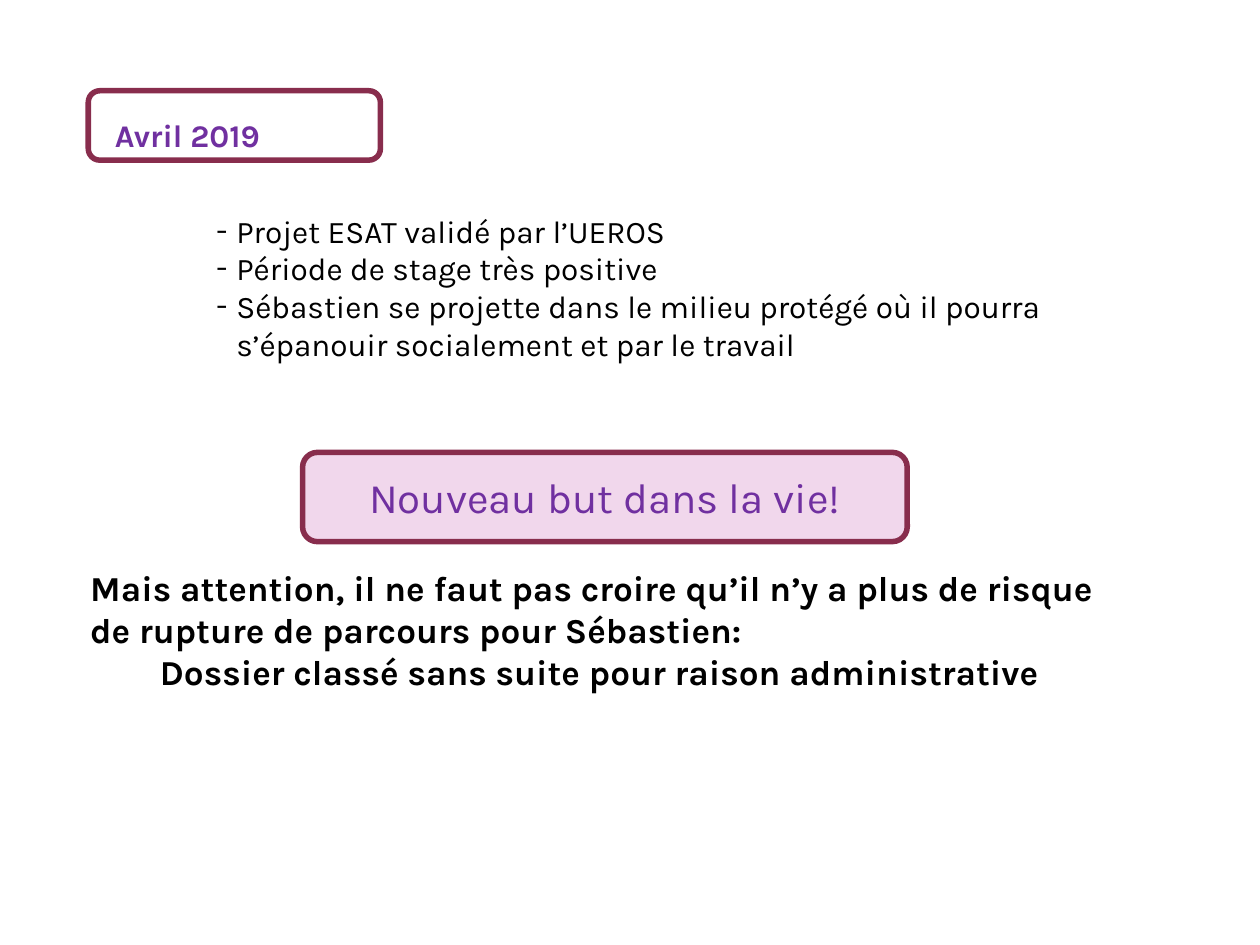
from lxml import etree
from pptx import Presentation
from pptx.dml.color import RGBColor
from pptx.enum.shapes import MSO_SHAPE
from pptx.enum.text import MSO_ANCHOR, MSO_AUTO_SIZE, PP_ALIGN
from pptx.oxml.ns import qn
from pptx.util import Cm, Pt

ROUNDED = MSO_SHAPE.ROUNDED_RECTANGLE
TOP, MIDDLE = MSO_ANCHOR.TOP, MSO_ANCHOR.MIDDLE
NO_AUTOFIT = MSO_AUTO_SIZE.NONE
LEFT, CENTER = PP_ALIGN.LEFT, PP_ALIGN.CENTER


def color(value):
    return RGBColor.from_string(value)


class SlideBuilder:
    FONT = "Karla"
    BLACK = "000000"
    PURPLE = "7030A0"
    BORDER = "882D4D"
    PINK = "F1D7EC"

    def __init__(self, slide):
        self.slide = slide

    def set_text(self, frame, lines, size, ink, bold=False, aligns=(LEFT,), anchor=TOP):
        frame.word_wrap = True
        frame.auto_size = NO_AUTOFIT
        frame.vertical_anchor = anchor
        frame.text = "\n".join(lines)
        for index, paragraph in enumerate(frame.paragraphs):
            paragraph.alignment = aligns[index % len(aligns)]
            paragraph.space_before = Pt(0)
            for run in paragraph.runs:
                run.font.name = self.FONT
                run.font.size = Pt(size)
                run.font.bold = bold
                run.font.color.rgb = color(ink)

    def place(self, shape, left, top, width, height):
        shape.left, shape.top = Cm(left), Cm(top)
        shape.width, shape.height = Cm(width), Cm(height)
        return shape

    def title(self, text, *box):
        heading = self.place(self.slide.shapes.title, *box)
        self.set_text(heading.text_frame, [text], 18, self.PURPLE, bold=True)

    def dash_list(self, items, indent, hanging, *box):
        body = self.place(self.slide.placeholders[1], *box)
        self.set_text(body.text_frame, items, 18, self.BLACK)
        for paragraph in body.text_frame.paragraphs:
            properties = paragraph._p.get_or_add_pPr()
            properties.set("marL", str(Cm(indent + hanging)))
            properties.set("indent", str(-Cm(hanging)))
            etree.SubElement(properties, qn("a:buFont"), typeface=self.FONT)
            etree.SubElement(properties, qn("a:buChar"), char="-")

    def frame(self, left, top, width, height, fill=None):
        panel = self.slide.shapes.add_shape(
            ROUNDED, Cm(left), Cm(top), Cm(width), Cm(height))
        panel.shadow.inherit = False
        if fill:
            panel.fill.solid()
            panel.fill.fore_color.rgb = color(fill)
        else:
            panel.fill.background()
        panel.line.color.rgb = color(self.BORDER)
        panel.line.width = Pt(3.15)
        return panel

    def banner(self, text, *box):
        panel = self.frame(*box, fill=self.PINK)
        self.set_text(panel.text_frame, [text], 24, self.PURPLE,
                      aligns=(CENTER,), anchor=MIDDLE)

    def warning(self, lines, left, top, width, height):
        note = self.slide.shapes.add_textbox(
            Cm(left), Cm(top), Cm(width), Cm(height))
        self.set_text(note.text_frame, lines, 20, self.BLACK, bold=True,
                      aligns=(LEFT, CENTER))


def main():
    deck = Presentation()
    deck.slide_width, deck.slide_height = Cm(25.4), Cm(19.05)
    builder = SlideBuilder(deck.slides.add_slide(deck.slide_layouts[1]))

    builder.title("Avril 2019", 2.06, 2.21, 11.91, 1.02)
    builder.frame(1.78, 1.83, 5.89, 1.4)
    builder.dash_list(
        [
            "Projet ESAT validé par l’UEROS",
            "Période de stage très positive",
            "Sébastien se projette dans le milieu protégé où il pourra "
            "s’épanouir socialement et par le travail",
        ],
        2.54, 0.4, 1.57, 4.14, 21.08, 3.35)
    builder.banner("Nouveau but dans la vie!", 6.1, 9.12, 12.19, 1.8)
    builder.warning(
        [
            "Mais attention, il ne faut pas croire qu’il n’y a plus de risque "
            "de rupture de parcours pour Sébastien:",
            "Dossier classé sans suite pour raison administrative",
        ],
        1.57, 11.3, 21.03, 2.82)

    deck.save("out.pptx")


if __name__ == "__main__":
    main()
